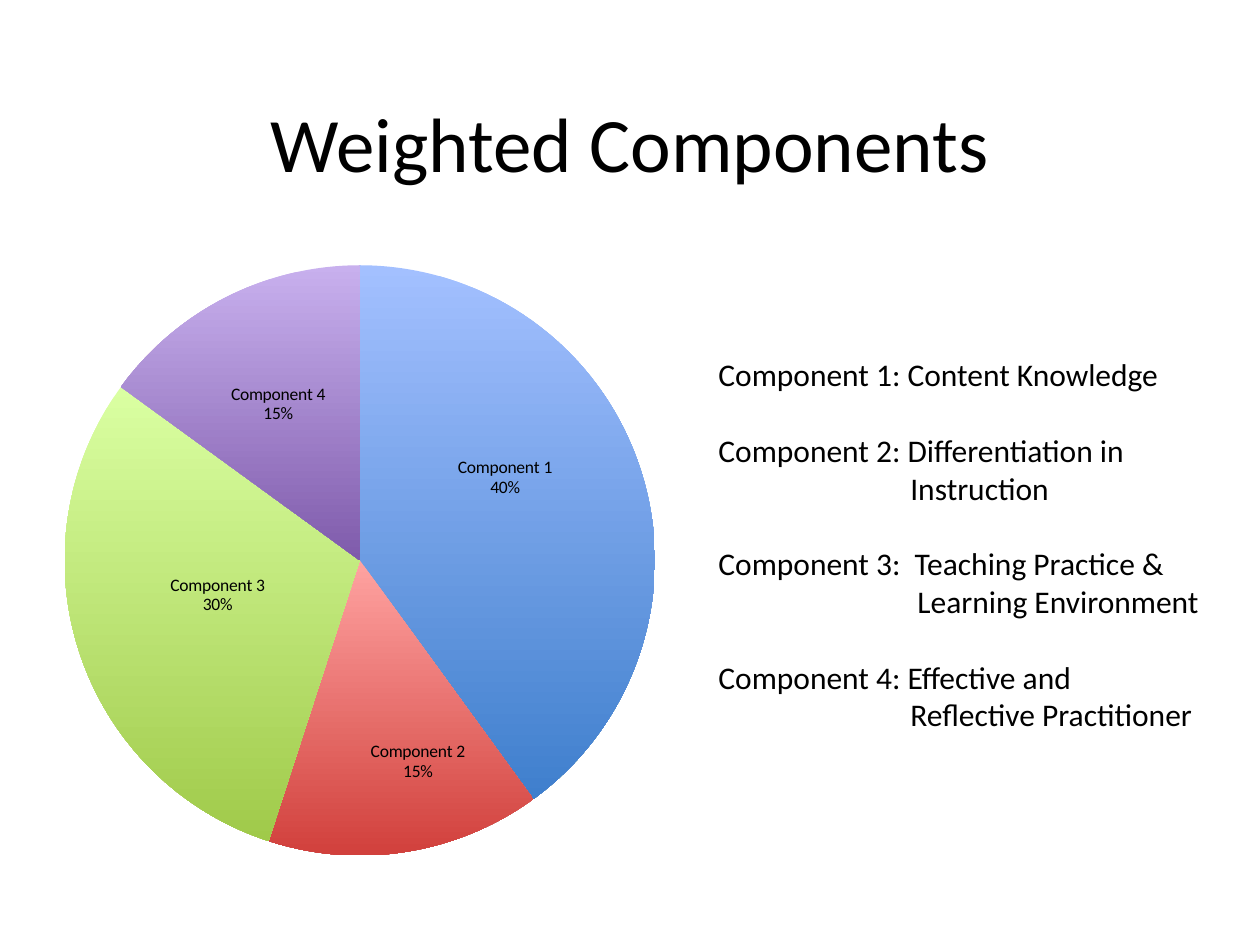
from pptx import Presentation
from pptx.chart.data import CategoryChartData
from pptx.dml.color import RGBColor
from pptx.enum.chart import XL_CHART_TYPE, XL_LABEL_POSITION
from pptx.enum.text import MSO_ANCHOR, PP_ALIGN
from pptx.oxml import parse_xml
from pptx.oxml.ns import nsdecls, qn
from pptx.util import Pt

PIE = XL_CHART_TYPE.PIE
CENTER_LABEL = XL_LABEL_POSITION.CENTER
MIDDLE = MSO_ANCHOR.MIDDLE
CENTER = PP_ALIGN.CENTER

PX = 914400 // 126
FONT = "Calibri"
COLORS = {
    "text": "000000",
    "blue": ("A3C0FF", "3F7FCD"),
    "red": ("FFA3A1", "D1403C"),
    "green": ("DAFFA2", "A0CA4A"),
    "purple": ("C8B0EE", "7F5BAB"),
}
# weight, colour, label shift from the slice's centre in px
SLICES = [
    (40, "blue", 5, -37),
    (15, "red", 35, 55),
    (30, "green", -2, -11),
    (15, "purple", -15, -25),
]
# description, hanging indent in px
DESCRIPTIONS = [
    ("Component 1: Content Knowledge", 192),
    ("Component 2: Differentiation in\vInstruction", 192),
    ("Component 3:  Teaching Practice &\vLearning Environment", 199),
    ("Component 4: Effective and\vReflective Practitioner", 192),
]


def style_font(font, size):
    font.name = FONT
    font.size = Pt(size)
    font.color.rgb = RGBColor.from_string(COLORS["text"])


def manual_layout(x, y, extra=""):
    return parse_xml(
        f'<c:layout {nsdecls("c")}><c:manualLayout>{extra}'
        f'<c:x val="{x:.3f}"/><c:y val="{y:.3f}"/>'
        '</c:manualLayout></c:layout>')


prs = Presentation()
prs.slide_width, prs.slide_height = 1260 * PX, 945 * PX
slide = prs.slides.add_slide(prs.slide_layouts[6])

# Title
title = slide.shapes.add_textbox(63 * PX, 63 * PX, 1134 * PX, 158 * PX).text_frame
title.word_wrap = True
title.vertical_anchor = MIDDLE
title.text = "Weighted Components"
title.paragraphs[0].alignment = CENTER
style_font(title.paragraphs[0].runs[0].font, 44)

# Pie of weights
weights = CategoryChartData()
weights.categories = [f"Component {n}" for n in range(1, len(SLICES) + 1)]
weights.add_series("Series 1", [weight for weight, *_ in SLICES])
chart_width, chart_height = 973, 727
pie = slide.shapes.add_chart(PIE, -97 * PX, 197 * PX, chart_width * PX,
                             chart_height * PX, weights).chart
pie.has_legend = False
pie.has_title = False
style_font(pie.font, 10)

# Fixed plot area
plot_area = pie.plots[0]._element.getparent()
for old_layout in plot_area.findall(qn("c:layout")):
    plot_area.remove(old_layout)
plot_layout = manual_layout(
    0.166, 0.094, '<c:layoutTarget val="inner"/>'
    '<c:xMode val="edge"/><c:yMode val="edge"/>')
for tag, size in (("w", 0.607), ("h", 0.812)):
    plot_layout[0].append(parse_xml(f'<c:{tag} {nsdecls("c")} val="{size}"/>'))
plot_area.insert(0, plot_layout)

# Slice gradients and labels
series = pie.plots[0].series[0]
labels = series.data_labels
labels.show_category_name = True
labels.show_percentage = True
labels.show_value = False
labels.position = CENTER_LABEL
for index, (_, color, dx, dy) in enumerate(SLICES):
    point = series.points[index]
    fill = point.format.fill
    fill.gradient()
    fill.gradient_angle = 270
    for stop, shade in zip(fill.gradient_stops, COLORS[color]):
        stop.color.rgb = RGBColor.from_string(shade)
    point.format.line.fill.background()

    point.data_label.position = CENTER_LABEL
    label = labels._element.findall(qn("c:dLbl"))[index]
    label.insert(1, manual_layout(dx / chart_width, dy / chart_height))
    for flag, shown in (("Val", 0), ("CatName", 1), ("Percent", 1)):
        label.find(qn(f"c:show{flag}")).set("val", str(shown))
    label.find(qn("c:showBubbleSize")).addnext(
        parse_xml(f'<c:separator {nsdecls("c")}>\n</c:separator>'))
labels._element.find(qn("c:showBubbleSize")).addnext(
    parse_xml(f'<c:separator {nsdecls("c")}>\n</c:separator>'))

# Component descriptions
descriptions = slide.shapes.add_textbox(706 * PX, 349 * PX, 525 * PX, 394 * PX).text_frame
descriptions.word_wrap = True
for index, (description, hang) in enumerate(DESCRIPTIONS):
    paragraph = descriptions.paragraphs[0] if index == 0 else descriptions.add_paragraph()
    paragraph.text = description
    paragraph.space_before = Pt(21.6 if index else 0)
    properties = paragraph._p.get_or_add_pPr()
    properties.set("marL", str(hang * PX))
    properties.set("indent", str(-hang * PX))
    for run in paragraph.runs:
        style_font(run.font, 18)

prs.save("out.pptx")
